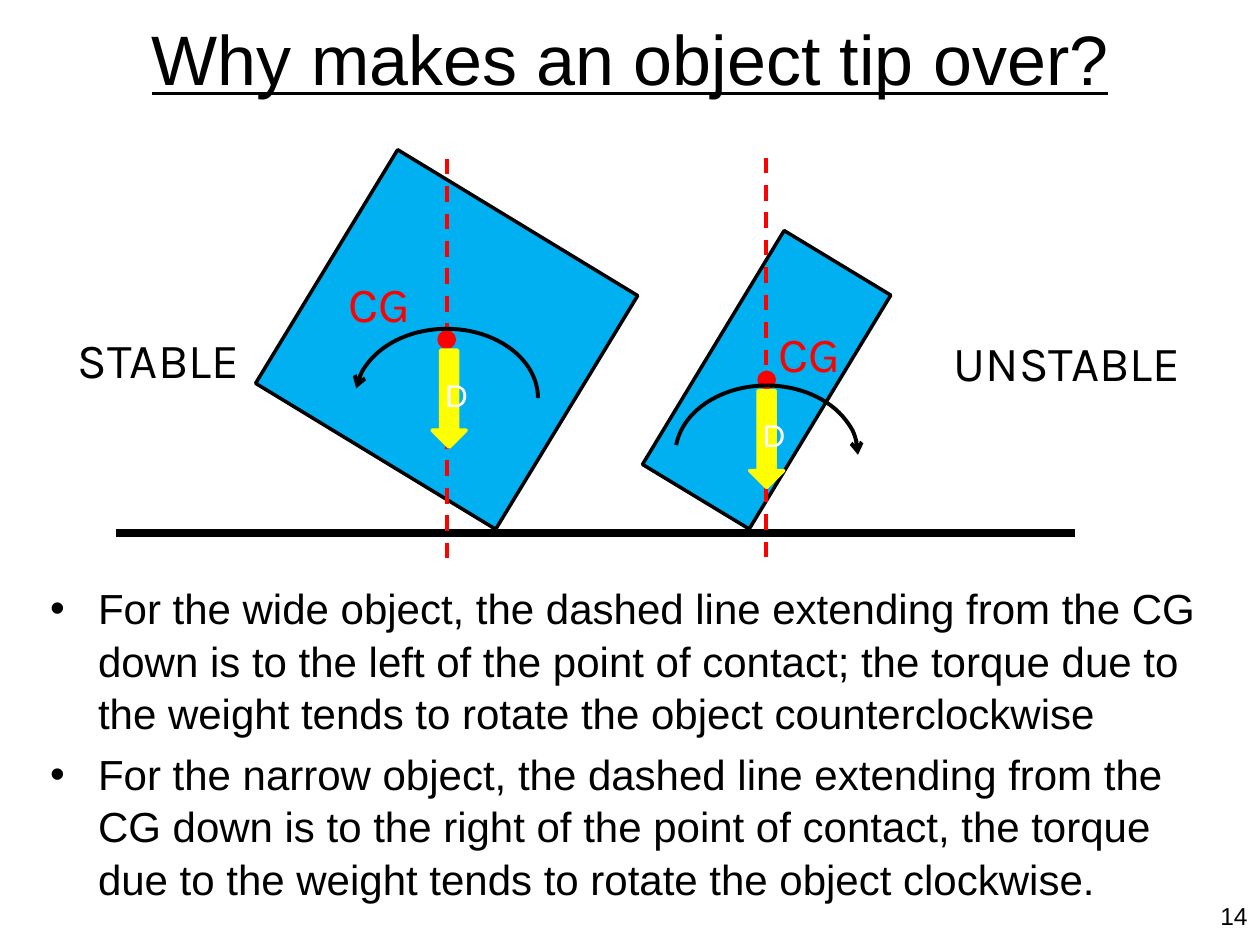
import pptx
import pptx.dml.color
import pptx.enum.dml
import pptx.enum.shapes
import pptx.enum.text
import pptx.oxml
import pptx.oxml.ns
import pptx.util
from pptx.util import Inches

COLORS = {
    "black": "000000",
    "white": "FFFFFF",
    "red": "FF0000",
    "blue": "00B0F0",
    "yellow": "FFFF00",
}
SHAPE = pptx.enum.shapes.MSO_SHAPE
ALIGN = pptx.enum.text.PP_ALIGN
ANCHOR = pptx.enum.text.MSO_ANCHOR
BULLETS = [
    "For the wide object, the dashed line extending from the CG down is to the left "
    "of the point of contact; the torque due to the weight tends to rotate the object "
    "counterclockwise",
    "For the narrow object, the dashed line extending from the CG down is to the right "
    "of the point of contact, the torque due to the weight tends to rotate the object "
    "clockwise.",
]


def color(name):
    return pptx.dml.color.RGBColor.from_string(COLORS[name])


def add_child(parent, tag, **attributes):
    child = pptx.oxml.parse_xml(f"<a:{tag} {pptx.oxml.ns.nsdecls('a')}/>")
    for key, value in attributes.items():
        child.set(key, value)
    parent.append(child)


def add_run(paragraph, text, size, font="Arial", ink="black", underline=None):
    run = paragraph.add_run()
    run.text = text
    run.font.size = pptx.util.Pt(size)
    run.font.name = font
    run.font.color.rgb = color(ink)
    run.font.underline = underline


def add_text(slide, box, text, size, align=ALIGN.LEFT, anchor=ANCHOR.TOP, wrap=True, **style):
    frame = slide.shapes.add_textbox(*map(Inches, box)).text_frame
    frame.word_wrap = wrap
    frame.vertical_anchor = anchor
    paragraph = frame.paragraphs[0]
    paragraph.alignment = align
    add_run(paragraph, text, size, **style)


def add_bullets(slide, box, texts):
    frame = slide.shapes.add_textbox(*map(Inches, box)).text_frame
    frame.word_wrap = True
    for index, text in enumerate(texts):
        paragraph = frame.add_paragraph() if index else frame.paragraphs[0]
        paragraph.space_before = pptx.util.Pt(5)
        paragraph.line_spacing = 1.04
        properties = paragraph._p.get_or_add_pPr()
        properties.set("marL", str(Inches(0.38)))
        properties.set("indent", str(-Inches(0.38)))
        add_child(properties, "buFont", typeface="Arial")
        add_child(properties, "buChar", char="•")
        add_run(paragraph, text, 24)


def add_line(slide, start, end, ink, width, dash=None):
    line = slide.shapes.add_connector(
        pptx.enum.shapes.MSO_CONNECTOR.STRAIGHT, *map(Inches, start + end))
    line.line.color.rgb = color(ink)
    line.line.width = pptx.util.Pt(width)
    line.line.dash_style = dash
    add_child(line._element.spPr, "effectLst")


def add_shape(shapes, kind, box, fill, outline, width=2):
    shape = shapes.add_shape(kind, *map(Inches, box))
    shape.shadow.inherit = False
    if fill:
        shape.fill.solid()
        shape.fill.fore_color.rgb = color(fill)
    else:
        shape.fill.background()
    shape.line.color.rgb = color(outline)
    shape.line.width = pptx.util.Pt(width)
    return shape


def add_tilted_block(slide, box, angle):
    """Block with a dot at its centre of gravity, turned as one group."""
    left, top, width, height = box
    dot = 0.12
    group = slide.shapes.add_group_shape()
    add_shape(group.shapes, SHAPE.RECTANGLE, box, "blue", "black")
    dot_box = (left + (width - dot) / 2, top + (height - dot) / 2, dot, dot)
    add_shape(group.shapes, SHAPE.OVAL, dot_box, "red", "red")
    group.rotation = angle


def add_weight_arrow(slide, left, top):
    arrow = add_shape(slide.shapes, SHAPE.DOWN_ARROW, (left, top, 0.27, 0.77), "yellow", "yellow")
    arrow.text_frame.vertical_anchor = ANCHOR.MIDDLE
    paragraph = arrow.text_frame.paragraphs[0]
    paragraph.alignment = ALIGN.CENTER
    add_run(paragraph, "D", 18, ink="white")


def add_torque_arc(slide, left, top, arrow_end):
    arc = add_shape(slide.shapes, SHAPE.ARC, (left, top, 1.45, 1.1), None, "black", 2.25)
    arc.adjustments[0] = 111.659
    arc.adjustments[1] = 0
    add_child(arc.line._get_or_add_ln(), arrow_end, type="arrow")


def main():
    presentation = pptx.Presentation()
    presentation.slide_width = Inches(10)
    presentation.slide_height = Inches(7.5)
    slide = presentation.slides.add_slide(presentation.slide_layouts[6])

    add_text(slide, (0, 0, 10, 0.92), "Why makes an object tip over?", 40,
             ALIGN.CENTER, ANCHOR.MIDDLE, underline=True)
    add_bullets(slide, (0.3, 4.56, 9.4, 2.53), BULLETS)
    add_text(slide, (9.43, 7.1, 0.57, 0.4), "14", 14, ALIGN.RIGHT)
    add_text(slide, (0.52, 2.57, 1.52, 0.57), "STABLE", 28, wrap=False, font="Karla")
    add_text(slide, (7.38, 2.59, 2.15, 0.57), " UNSTABLE", 28, wrap=False, font="Karla")

    add_line(slide, (0.92, 4.23), (8.53, 4.23), "black", 4.5)
    add_tilted_block(slide, (2.43, 1.61, 2.23, 2.17), 31.3)
    add_tilted_block(slide, (5.59, 1.93, 0.99, 2.17), 31.2)
    for x, top, bottom in [(3.55, 1.26, 4.49), (6.08, 1.25, 4.47)]:
        add_line(slide, (x, top), (x, bottom), "red", 2.25, pptx.enum.dml.MSO_LINE.DASH)
    for left, top in [(3.43, 2.78), (5.95, 3.1)]:
        add_weight_arrow(slide, left, top)
    for left, top in [(2.67, 2.12), (6.08, 2.52)]:
        add_text(slide, (left, top, 0.79, 0.57), "CG", 28, font="Karla", ink="red")
    add_torque_arc(slide, 2.82, 2.61, "headEnd")
    add_torque_arc(slide, 5.36, 3.06, "tailEnd")

    presentation.save("out.pptx")


if __name__ == "__main__":
    main()
